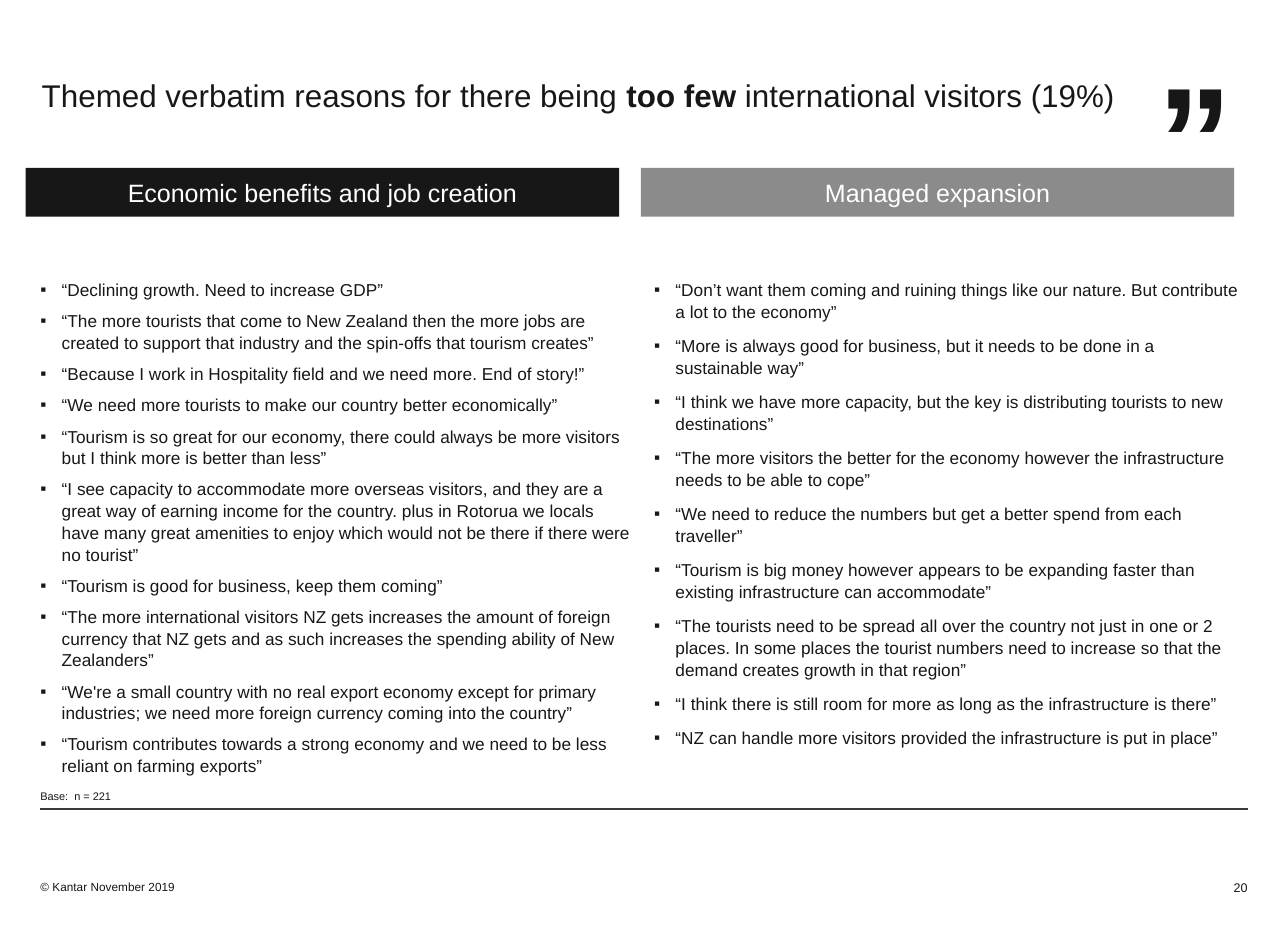
from lxml.etree import SubElement
from pptx import Presentation
from pptx.dml.color import RGBColor
from pptx.enum.shapes import MSO_CONNECTOR, MSO_SHAPE
from pptx.enum.text import MSO_ANCHOR, MSO_AUTO_SIZE, PP_ALIGN
from pptx.oxml.ns import qn
from pptx.util import Cm, Pt

INK = "171717"
TOP, BOTTOM = MSO_ANCHOR.TOP, MSO_ANCHOR.BOTTOM
LEFT, RIGHT = PP_ALIGN.LEFT, PP_ALIGN.RIGHT
COLUMN_WIDTH = 13.36


def rgb(value):
    return RGBColor.from_string(value)


def prepare(shape, anchor, inset_top=0):
    frame = shape.text_frame
    frame.word_wrap = True
    frame.auto_size = MSO_AUTO_SIZE.NONE
    frame.vertical_anchor = anchor
    frame.margin_left = frame.margin_right = frame.margin_bottom = 0
    frame.margin_top = Cm(inset_top)
    return frame


deck = Presentation()
deck.slide_width, deck.slide_height = Cm(29), Cm(21)
page = deck.slides.add_slide(deck.slide_layouts[5])

title = page.shapes.title
title.left, title.top, title.width, title.height = Cm(0.94), Cm(1.02), Cm(27.18), Cm(2.34)
para = prepare(title, TOP, 0.66).paragraphs[0]
para.alignment = LEFT
para.line_spacing = 1.05
para.font.name = "Arial"
para.font.size = Pt(20)
para.font.color.rgb = rgb(INK)
for wording, bold in [
    ("Themed verbatim reasons for there being ", False),
    ("too few ", True),
    ("international visitors (19%)", False),
]:
    span = para.add_run()
    span.text = wording
    span.font.bold = bold

themes = [
    ("Economic benefits and job creation", INK, 0.58, 0.91, 6, [
        "“Declining growth. Need to increase GDP”",
        "“The more tourists that come to New Zealand then the more jobs are created to support that industry and the spin-offs that tourism creates”",
        "“Because I work in Hospitality field and we need more. End of story!”",
        "“We need more tourists to make our country better economically”",
        "“Tourism is so great for our economy, there could always be more visitors but I think more is better than less”",
        "“I see capacity to accommodate more overseas visitors, and they are a great way of earning income for the country. plus in Rotorua we locals have many great amenities to enjoy which would not be there if there were no tourist”",
        "“Tourism is good for business, keep them coming”",
        "“The more international visitors NZ gets increases the amount of foreign currency that NZ gets and as such increases the spending ability of New Zealanders”",
        "“We're a small country with no real export economy except for primary industries; we need more foreign currency coming into the country”",
        "“Tourism contributes towards a strong economy and we need to be less reliant on farming exports”",
    ]),
    ("Managed expansion", "8B8B8B", 14.43, 14.73, 8, [
        "“Don’t want them coming and ruining things like our nature. But contribute a lot to the economy”",
        "“More is always good for business, but it needs to be done in a sustainable way”",
        "“I think we have more capacity, but the key is distributing tourists to new destinations”",
        "“The more visitors the better for the economy however the infrastructure needs to be able to cope”",
        "“We need to reduce the numbers but get a better spend from each traveller”",
        "“Tourism is big money however appears to be expanding faster than existing infrastructure can accommodate”",
        "“The tourists need to be spread all over the country not just in one or 2 places. In some places the tourist numbers need to increase so that the demand creates growth in that region”",
        "“I think there is still room for more as long as the infrastructure is there”",
        "“NZ can handle more visitors provided the infrastructure is put in place”",
    ]),
]
for heading, fill, banner_left, quotes_left, gap, quotes in themes:
    banner = page.shapes.add_shape(
        MSO_SHAPE.RECTANGLE, Cm(banner_left), Cm(3.78), Cm(COLUMN_WIDTH), Cm(1.1)
    )
    banner.shadow.inherit = False
    banner.fill.solid()
    banner.fill.fore_color.rgb = rgb(fill)
    banner.line.fill.background()
    para = prepare(banner, MSO_ANCHOR.MIDDLE).paragraphs[0]
    para.text = heading
    para.alignment = PP_ALIGN.CENTER
    para.font.name = "Arial"
    para.font.size = Pt(16)
    para.font.color.rgb = rgb("FFFFFF")

    box = page.shapes.add_textbox(Cm(quotes_left), Cm(6.27), Cm(COLUMN_WIDTH), Cm(11))
    frame = prepare(box, TOP)
    for index, quote in enumerate(quotes):
        para = frame.add_paragraph() if index else frame.paragraphs[0]
        para.text = quote
        para.line_spacing = 1.05
        para.space_after = Pt(gap)
        properties = para._p.get_or_add_pPr()
        properties.set("marL", str(Cm(0.48)))
        properties.set("indent", str(-Cm(0.48)))
        SubElement(properties, qn("a:buFont")).set("typeface", "Arial")
        SubElement(properties, qn("a:buChar")).set("char", "▪")
        para.font.name = "Arial"
        para.font.size = Pt(11)
        para.font.color.rgb = rgb(INK)

rule = page.shapes.add_connector(
    MSO_CONNECTOR.STRAIGHT, Cm(0.9), Cm(18.21), Cm(28.09), Cm(18.21)
)
rule.line.color.rgb = rgb("3A3A3A")
rule.line.width = Pt(0.75)
SubElement(rule._element.spPr, qn("a:effectLst"))

for wording, left, top, width, height, size, bold, alignment, anchor, inset_top in [
    ("”", 25.5, 0.66, 2.26, 2.13, 96, True, RIGHT, TOP, 0.3),
    ("Base:  n = 221", 0.91, 17.48, 24, 0.58, 7, False, LEFT, BOTTOM, 0),
    ("© Kantar November 2019", 0.91, 19.43, 7.06, 0.69, 7.5, False, LEFT, BOTTOM, 0),
    ("20", 26.49, 19.38, 1.6, 0.76, 8, False, RIGHT, BOTTOM, 0),
]:
    box = page.shapes.add_textbox(Cm(left), Cm(top), Cm(width), Cm(height))
    para = prepare(box, anchor, inset_top).paragraphs[0]
    para.text = wording
    para.alignment = alignment
    para.font.name = "Arial"
    para.font.size = Pt(size)
    para.font.bold = bold
    para.font.color.rgb = rgb(INK)

deck.save("out.pptx")
